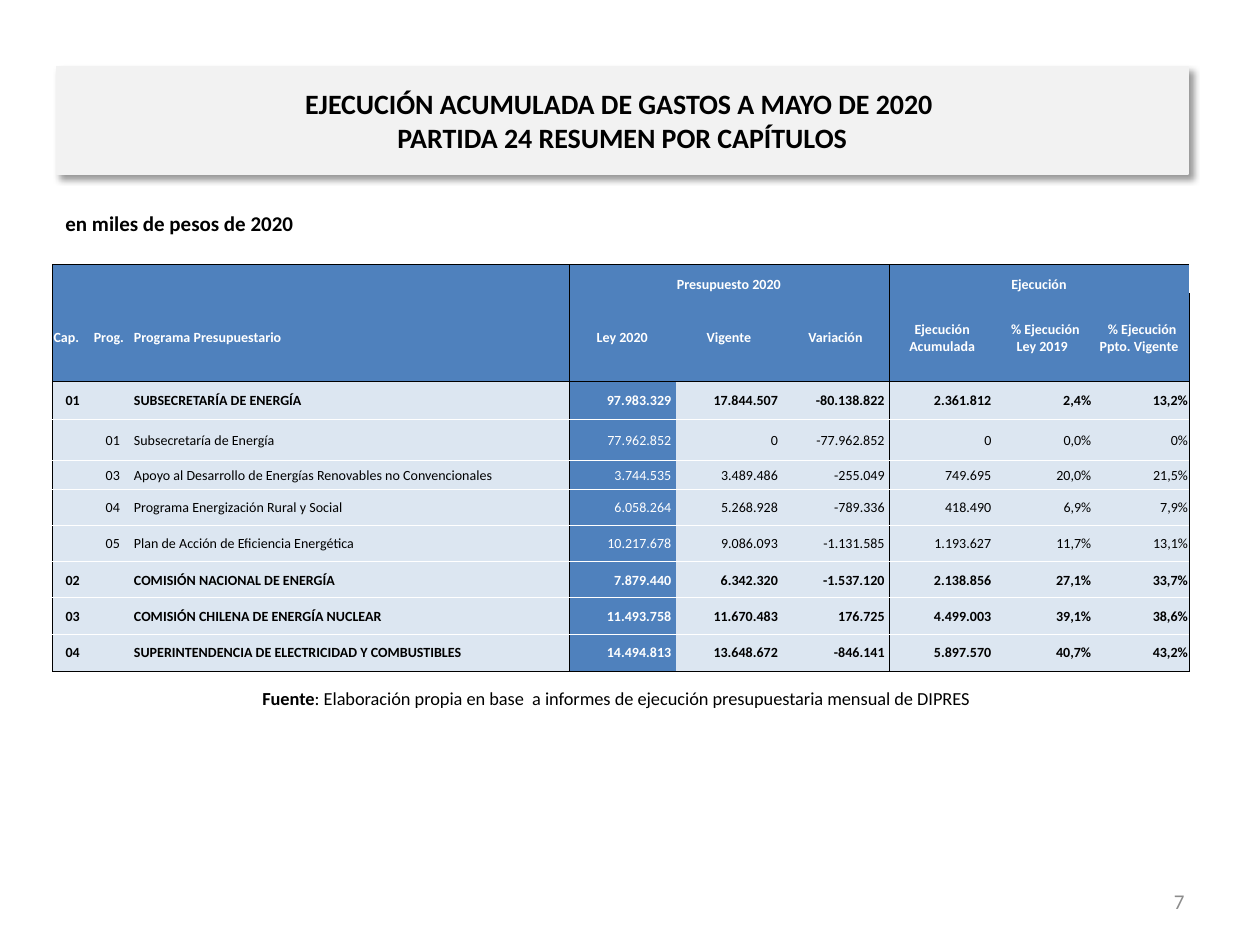
import lxml.etree
import pptx
import pptx.dml.color
import pptx.enum.shapes
import pptx.enum.text
import pptx.oxml.ns
import pptx.util

Cm, Pt, qn = pptx.util.Cm, pptx.util.Pt, pptx.oxml.ns.qn
ALIGN = pptx.enum.text.PP_ALIGN
ANCHOR = pptx.enum.text.MSO_ANCHOR

COLORS = {"blue": "4F81BD", "pale": "DCE6F1", "banner": "F2F2F2",
          "black": "000000", "white": "FFFFFF", "grey": "8C8C8C"}

COLUMN_WIDTHS = [0.81, 0.81, 8.79, 2.15, 2.15, 2.15, 2.15, 1.95, 1.95]
ROW_HEIGHTS = [0.58, 1.78, 0.76, 0.83, 0.58, 0.73, 0.73, 0.73, 0.73, 0.75]
GROUPS = ["", "", "", "Presupuesto 2020", "", "", "Ejecución", "", ""]
HEADINGS = ["Cap.", "Prog.", "Programa Presupuestario", "Ley 2020", "Vigente",
            "Variación", "Ejecución Acumulada", " % Ejecución Ley 2019 ",
            " % Ejecución Ppto. Vigente "]
PROGRAMS = [
    ["01", "", "SUBSECRETARÍA DE ENERGÍA", "97.983.329", "17.844.507",
     "-80.138.822", "2.361.812", "2,4%", "13,2%"],
    ["", "01", "Subsecretaría de Energía", "77.962.852", "0",
     "-77.962.852", "0", "0,0%", "0%"],
    ["", "03", "Apoyo al Desarrollo de Energías Renovables no Convencionales",
     "3.744.535", "3.489.486", "-255.049", "749.695", "20,0%", "21,5%"],
    ["", "04", "Programa Energización Rural y Social", "6.058.264", "5.268.928",
     "-789.336", "418.490", "6,9%", "7,9%"],
    ["", "05", "Plan de Acción de Eficiencia Energética", "10.217.678",
     "9.086.093", "-1.131.585", "1.193.627", "11,7%", "13,1%"],
    ["02", "", "COMISIÓN NACIONAL DE ENERGÍA", "7.879.440", "6.342.320",
     "-1.537.120", "2.138.856", "27,1%", "33,7%"],
    ["03", "", "COMISIÓN CHILENA DE ENERGÍA NUCLEAR", "11.493.758",
     "11.670.483", "176.725", "4.499.003", "39,1%", "38,6%"],
    ["04", "", "SUPERINTENDENCIA DE ELECTRICIDAD Y COMBUSTIBLES", "14.494.813",
     "13.648.672", "-846.141", "5.897.570", "40,7%", "43,2%"],
]
BODY_ALIGN = [ALIGN.CENTER] * 2 + [ALIGN.JUSTIFY] + [ALIGN.RIGHT] * 6
HEADING_ALIGN = [ALIGN.LEFT] * 3 + [ALIGN.CENTER] * 6


class SlideBuilder:
    """Hold the style and the current slide, and add its elements."""

    def __init__(self, prs, font="Calibri"):
        self.s = prs.slides.add_slide(prs.slide_layouts[6])
        self.font = font

    def rgb(self, name):
        return pptx.dml.color.RGBColor.from_string(COLORS[name])

    def format(self, p, size, color="black", bold=False, align=ALIGN.LEFT):
        p.alignment = align
        for r in p.runs:
            r.font.name, r.font.size, r.font.bold = self.font, Pt(size), bold
            r.font.color.rgb = self.rgb(color)
        lxml.etree.SubElement(p._p, qn("a:endParaRPr"), sz=str(size * 100))

    def text(self, box, text, size, anchor=ANCHOR.TOP, **style):
        sp = self.s.shapes.add_textbox(*map(Cm, box))
        tf = sp.text_frame
        tf.word_wrap, tf.vertical_anchor = True, anchor
        p = tf.paragraphs[0]
        for part in text.split("|"):
            p.add_run().text = part
        self.format(p, size, **style)
        return p

    def banner(self, box, text):
        sp = self.s.shapes.add_shape(
            pptx.enum.shapes.MSO_SHAPE.RECTANGLE, *map(Cm, box))
        sp.fill.solid()
        sp.fill.fore_color.rgb = sp.line.color.rgb = self.rgb("banner")
        sp.line.width = Pt(0.75)
        sp.shadow.inherit = False
        shadow = lxml.etree.SubElement(
            sp._element.spPr.find(qn("a:effectLst")), qn("a:outerShdw"),
            blurRad=str(Pt(4)), dist=str(Pt(3)), dir="2700000",
            algn="tl", rotWithShape="0")
        color = lxml.etree.SubElement(shadow, qn("a:srgbClr"), val=COLORS["black"])
        lxml.etree.SubElement(color, qn("a:alpha"), val="40000")
        tf = sp.text_frame
        tf.vertical_anchor = ANCHOR.MIDDLE
        p = tf.paragraphs[0]
        p.text = text
        self.format(p, 16, bold=True, align=ALIGN.CENTER)

    def borders(self, cell, edges):
        tcPr = cell._tc.get_or_add_tcPr()
        for i, (side, color) in enumerate(zip("LRTB", edges)):
            ln = lxml.etree.Element(qn(f"a:ln{side}"), w=str(Pt(0.5)))
            fill = lxml.etree.SubElement(
                ln, qn("a:solidFill" if color else "a:noFill"))
            if color:
                lxml.etree.SubElement(fill, qn("a:srgbClr"), val=COLORS[color])
            tcPr.insert(i, ln)

    def cell(self, cell, text, fill, anchor, edges, **style):
        cell.margin_left = cell.margin_right = cell.margin_top = Cm(0.02)
        cell.margin_bottom = Cm(0)
        cell.vertical_anchor = anchor
        cell.fill.solid()
        cell.fill.fore_color.rgb = self.rgb(fill)
        self.borders(cell, edges)
        p = cell.text_frame.paragraphs[0]
        p.text = text
        self.format(p, 8, **style)

    def table(self, left, top):
        rows = [GROUPS, HEADINGS, *PROGRAMS]
        frame = self.s.shapes.add_table(
            len(rows), len(COLUMN_WIDTHS), Cm(left), Cm(top),
            Cm(sum(COLUMN_WIDTHS)), Cm(sum(ROW_HEIGHTS)))
        table = frame.table
        table.first_row = table.horz_banding = False
        for column, width in zip(table.columns, COLUMN_WIDTHS):
            column.width = Cm(width)
        for row, height in zip(table.rows, ROW_HEIGHTS):
            row.height = Cm(height)
        horizontal = ["black", None, "black"] + ["white"] * 7 + ["black"]
        vertical = ["black" if c % 3 == 0 else None for c in range(10)]
        for i, values in enumerate(rows):
            header = i < 2
            for c, value in enumerate(values):
                blue = header or c == 3
                if not header and 3 <= c <= 6:
                    value += " "
                self.cell(
                    table.cell(i, c), value, "blue" if blue else "pale",
                    ANCHOR.BOTTOM if i == 0 else ANCHOR.MIDDLE,
                    [*vertical[c:c + 2], *horizontal[i:i + 2]],
                    color="white" if blue else "black",
                    bold=header or bool(values[0]),
                    align=(HEADING_ALIGN if header else BODY_ALIGN)[c])
        for c in (3, 6):
            table.cell(0, c).merge(table.cell(0, c + 2))


def main():
    prs = pptx.Presentation()
    prs.slide_width, prs.slide_height = Cm(25.4), Cm(19.05)
    slide = SlideBuilder(prs)
    slide.text((18.21, 17.65, 5.92, 1.02), "7", 12, ANCHOR.MIDDLE,
               color="grey", align=ALIGN.RIGHT)
    p = slide.text(
        (1.07, 13.72, 22.71, 0.74),
        "Fuente|: Elaboración propia en base  a informes de ejecución "
        "presupuestaria mensual de DIPRES", 10.5, align=ALIGN.CENTER)
    p.runs[0].font.bold = True
    slide.text((1.07, 4.11, 19.05, 0.94), "en miles de pesos de 2020", 12, bold=True)
    slide.banner((1.14, 1.35, 22.81, 2.16),
                 "EJECUCIÓN ACUMULADA DE GASTOS A MAYO DE 2020 \v"
                 "PARTIDA 24 RESUMEN POR CAPÍTULOS")
    slide.table(1.06, 5.33)
    prs.save("out.pptx")


if __name__ == "__main__":
    main()
